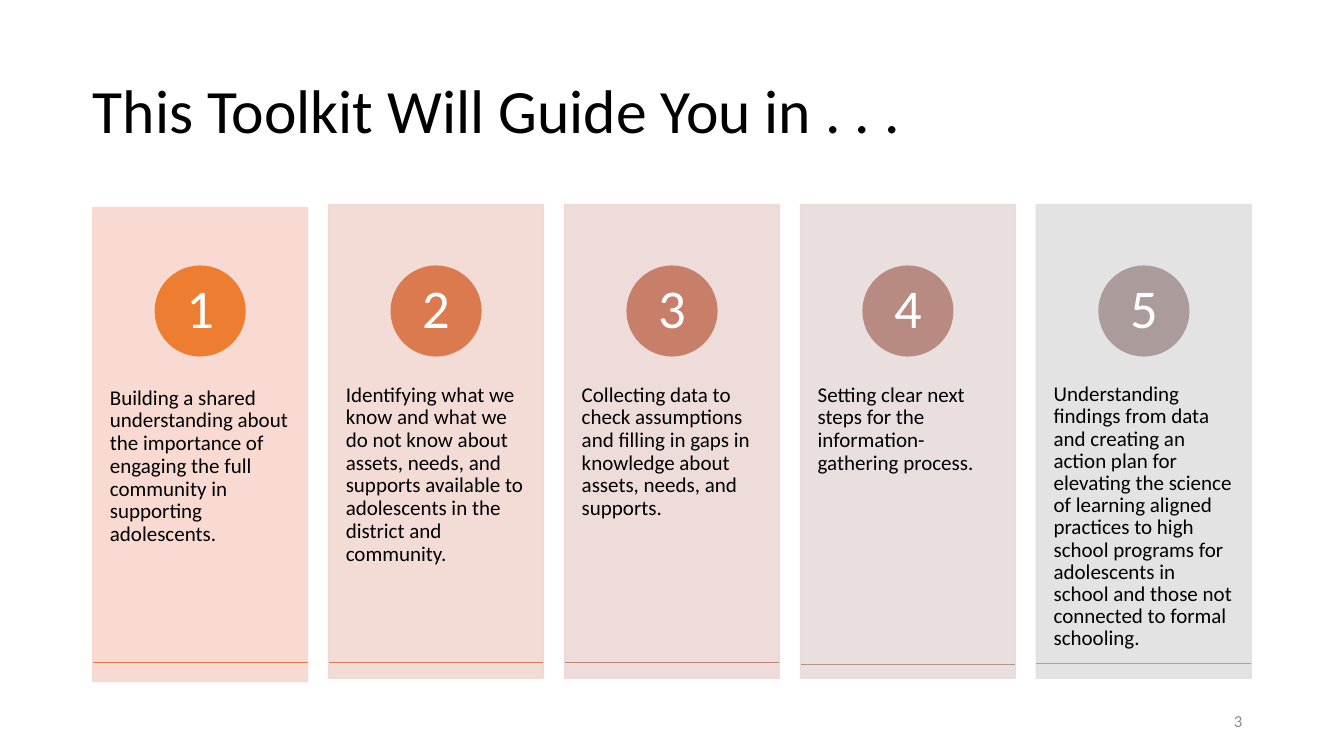
from dataclasses import dataclass

from lxml.etree import SubElement
from pptx import Presentation
from pptx.dml.color import RGBColor
from pptx.enum.shapes import MSO_CONNECTOR as Connector, MSO_SHAPE as Shape
from pptx.enum.text import MSO_ANCHOR as Anchor, MSO_AUTO_SIZE as AutoSize, PP_ALIGN as Align
from pptx.oxml.ns import qn
from pptx.util import Inches, Pt


@dataclass(frozen=True)
class Theme:
    font: str = "Calibri"
    ink: str = "000000"
    light: str = "FFFFFF"
    muted: str = "8C8C8C"
    title_size: float = 44
    number_size: float = 39
    body_size: float = 15
    footer_size: float = 12
    line_width: float = 1
    card_opacity: int = 90


@dataclass(frozen=True)
class Step:
    text: str
    card: str
    circle: str
    rule: str
    card_top: float = 2.03
    rule_top: float = 6.57
    spacing: float = 0.9
    bottom_inset: float = 0.36


THEME = Theme()
LEFT = 0.92
CONTENT_WIDTH = 11.5
COLUMN_PITCH = 2.34
CARD_WIDTH, CARD_HEIGHT = 2.13, 4.7
CIRCLE_TOP, CIRCLE_SIZE = 2.64, 0.89
TEXT_OFFSET, TEXT_HEIGHT = 1.78, 2.82

STEPS = (
    Step("Building a shared understanding about the importance of engaging the full "
         "community in supporting adolescents.",
         "F8D7CE", "ED7D31", "E37A40", card_top=2.06),
    Step("Identifying what we know and what we do not know about assets, needs, and "
         "supports available to adolescents in the district and community.",
         "F2D8D2", "DA7A4E", "D17B5C"),
    Step("Collecting data to check assumptions and filling in gaps in knowledge about "
         "assets, needs, and supports.",
         "EDD9D7", "C87F69", "C08376"),
    Step("Setting clear next steps for the information-gathering process.",
         "E7DCDC", "B98A82", "B2928E", rule_top=6.59),
    Step("Understanding findings from data and creating an action plan for elevating the "
         "science of learning aligned practices to high school programs for adolescents "
         "in school and those not connected to formal schooling.",
         "E1E1E1", "AB9B9A", "A5A5A5", rule_top=6.58, spacing=0.88, bottom_inset=0),
)


def color(value):
    return RGBColor.from_string(value)


def write(shape, text, *, size, ink=THEME.ink, align=Align.LEFT, anchor=Anchor.TOP,
          insets=(0.1, 0.05, 0.1, 0.05), spacing=0.9):
    frame = shape.text_frame
    frame.word_wrap = True
    frame.auto_size = AutoSize.NONE
    frame.vertical_anchor = anchor
    (frame.margin_left, frame.margin_top,
     frame.margin_right, frame.margin_bottom) = map(Inches, insets)
    paragraph = frame.paragraphs[0]
    paragraph.alignment = align
    paragraph.line_spacing = spacing
    paragraph.space_before = Pt(0)
    run = paragraph.add_run()
    run.text = text
    run.font.name = THEME.font
    run.font.size = Pt(size)
    run.font.color.rgb = color(ink)


def add_text(slide, box, text, **text_format):
    write(slide.shapes.add_textbox(*map(Inches, box)), text, **text_format)


def add_filled(slide, kind, box, fill, opacity=100):
    shape = slide.shapes.add_shape(kind, *map(Inches, box))
    shape.shadow.inherit = False
    shape.fill.solid()
    shape.fill.fore_color.rgb = color(fill)
    shape.line.color.rgb = color(fill)
    shape.line.width = Pt(THEME.line_width)
    if opacity < 100:
        for tone in shape.element.spPr.iter(qn("a:srgbClr")):
            SubElement(tone, qn("a:alpha"), val=str(opacity * 1000))
    return shape


def add_rule(slide, left, top, width, ink):
    x1, x2, y = Inches(left), Inches(left + width), Inches(top)
    rule = slide.shapes.add_connector(Connector.STRAIGHT, x1, y, x2, y)
    rule.line.color.rgb = color(ink)
    rule.line.width = Pt(THEME.line_width)
    SubElement(rule.element.spPr, qn("a:effectLst"))


def add_title(slide, text):
    title = slide.shapes.title
    title.left, title.top = Inches(LEFT), Inches(0.4)
    title.width, title.height = Inches(CONTENT_WIDTH), Inches(1.45)
    write(title, text, size=THEME.title_size, anchor=Anchor.MIDDLE,
          insets=(0, 0.05, 0.1, 0.05))


def add_step(slide, index, step):
    left = LEFT + index * COLUMN_PITCH
    add_filled(slide, Shape.RECTANGLE, (left, step.card_top, CARD_WIDTH, CARD_HEIGHT),
               step.card, THEME.card_opacity)
    add_text(slide, (left, step.card_top + TEXT_OFFSET, CARD_WIDTH, TEXT_HEIGHT), step.text,
             size=THEME.body_size, spacing=step.spacing,
             insets=(0.17, 0, 0.17, step.bottom_inset))
    circle_left = left + (CARD_WIDTH - CIRCLE_SIZE) / 2
    circle = add_filled(slide, Shape.OVAL,
                        (circle_left, CIRCLE_TOP, CIRCLE_SIZE, CIRCLE_SIZE), step.circle)
    write(circle, str(index + 1), size=THEME.number_size, ink=THEME.light,
          align=Align.CENTER, anchor=Anchor.MIDDLE, insets=(0.07, 0.01, 0.07, 0.01))
    add_rule(slide, left, step.rule_top, CARD_WIDTH, step.rule)


def main():
    presentation = Presentation()
    presentation.slide_width, presentation.slide_height = Inches(13.33), Inches(7.5)
    slide = presentation.slides.add_slide(presentation.slide_layouts.get_by_name("Title Only"))
    add_title(slide, "This Toolkit Will Guide You in . . .")
    for index, step in enumerate(STEPS):
        add_step(slide, index, step)
    add_text(slide, (LEFT + CONTENT_WIDTH - 3, 6.95, 3, 0.4), "3", size=THEME.footer_size,
             ink=THEME.muted, align=Align.RIGHT, anchor=Anchor.MIDDLE, spacing=1.0)
    presentation.save("out.pptx")


if __name__ == "__main__":
    main()
